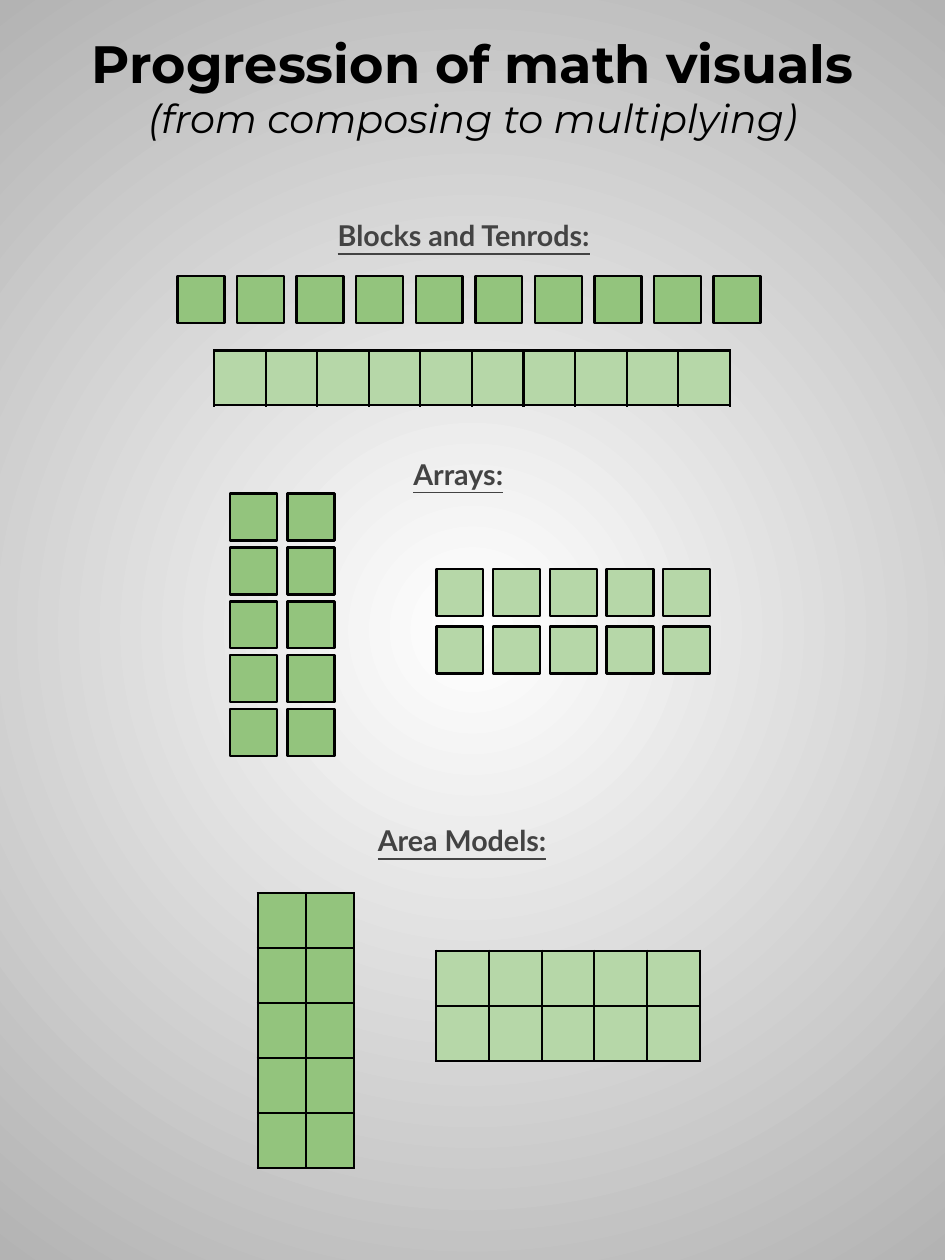
from lxml import etree
from pptx import Presentation
from pptx.dml.color import RGBColor
from pptx.enum.shapes import MSO_SHAPE
from pptx.enum.text import MSO_ANCHOR as ANCHOR, PP_ALIGN as ALIGN
from pptx.oxml import parse_xml
from pptx.oxml.ns import nsdecls, qn
from pptx.util import Pt

PX = 9144  # 100 px to the inch
BLACK, GREY, GREEN, LIGHT = "000000", "434343", "93C47D", "B6D7A8"
BLOCK = 41


def rgb(hex_):
    return RGBColor.from_string(hex_)


def text(x, y, w, h, lines, font="Lato", color=GREY, align=ALIGN.LEFT,
         anchor=ANCHOR.TOP, spacing=1.0, after=0):
    """Each line is (wording, size, bold, italic, underline)."""
    tf = s.shapes.add_textbox(x * PX, y * PX, w * PX, h * PX).text_frame
    tf.word_wrap = True
    tf.vertical_anchor = anchor
    tf.margin_left = tf.margin_right = tf.margin_top = tf.margin_bottom = 10 * PX
    for i, (words, size, bold, italic, underline) in enumerate(lines):
        p = tf.paragraphs[0] if i == 0 else tf.add_paragraph()
        p.alignment, p.line_spacing, p.space_after = align, spacing, Pt(after)
        r = p.add_run()
        r.text = words
        f = r.font
        f.name, f.size, f.color.rgb = font, Pt(size), rgb(color)
        f.bold, f.italic, f.underline = bold, italic, underline


prs = Presentation()
prs.slide_width, prs.slide_height = 825 * PX, 1100 * PX
s = prs.slides.add_slide(prs.slide_layouts[6])

# Radial background
fill = s.background.fill
fill.gradient()
for stop, color in zip(fill.gradient_stops, ("FFFFFF", "B3B3B3")):
    stop.color.rgb = rgb(color)
grad = s.element.find(".//" + qn("a:gradFill"))
grad.replace(grad.find(qn("a:lin")), parse_xml(
    f'<a:path {nsdecls("a")} path="circle">'
    '<a:fillToRect l="50000" t="50000" r="50000" b="50000"/></a:path>'))

# Title and section headings
text(28, 11, 769, 129,
     [("Progression of math visuals", 33, True, False, False),
      ("(from composing to multiplying)", 25, False, True, False)],
     font="Montserrat", color=BLACK, align=ALIGN.CENTER, anchor=ANCHOR.MIDDLE)
for words, x, y, w, h in [("Blocks and Tenrods:", 285, 176, 256, 66),
                          ("Arrays:", 351, 384, 123, 47),
                          ("Area Models:", 320, 704, 186, 66)]:
    text(x, y, w, h, [(words, 18, True, False, True)], spacing=1.15, after=12)

# Separate blocks: left, top, columns, rows, column step, row step, colour
for x, y, cols, rows, dx, dy, color in [(155, 241, 10, 1, 52, 0, GREEN),
                                        (201, 431, 2, 5, 50, 47, GREEN),
                                        (381, 497, 5, 2, 49.5, 50, LIGHT)]:
    for row in range(rows):
        for col in range(cols):
            sp = s.shapes.add_shape(
                MSO_SHAPE.RECTANGLE, int((x + col * dx) * PX), (y + row * dy) * PX,
                BLOCK * PX, BLOCK * PX)
            sp.shadow.inherit = False
            sp.fill.solid()
            sp.fill.fore_color.rgb = rgb(color)
            sp.line.color.rgb = rgb(BLACK)
            sp.line.width = Pt(1.5)

# Joined blocks: left, top, columns, rows, cell width, colour
ROW_H = 48
for x, y, cols, rows, cell_w, color in [(187, 306, 10, 1, 45, LIGHT),
                                        (225, 780, 2, 5, 42, GREEN),
                                        (381, 830, 5, 2, 46, LIGHT)]:
    tbl = s.shapes.add_table(rows, cols, x * PX, y * PX, cols * cell_w * PX,
                             rows * ROW_H * PX).table
    tbl.first_row = tbl.horz_banding = False
    for column in tbl.columns:
        column.width = cell_w * PX
    for row in tbl.rows:
        row.height = ROW_H * PX
    for cell in tbl.iter_cells():
        tcPr = cell._tc.get_or_add_tcPr()
        for side in ("lnL", "lnR", "lnT", "lnB"):
            ln = etree.SubElement(tcPr, qn("a:" + side), w=str(Pt(1.5)))
            line_fill = etree.SubElement(ln, qn("a:solidFill"))
            etree.SubElement(line_fill, qn("a:srgbClr"), val=BLACK)
        cell.fill.solid()
        cell.fill.fore_color.rgb = rgb(color)

prs.save("out.pptx")
